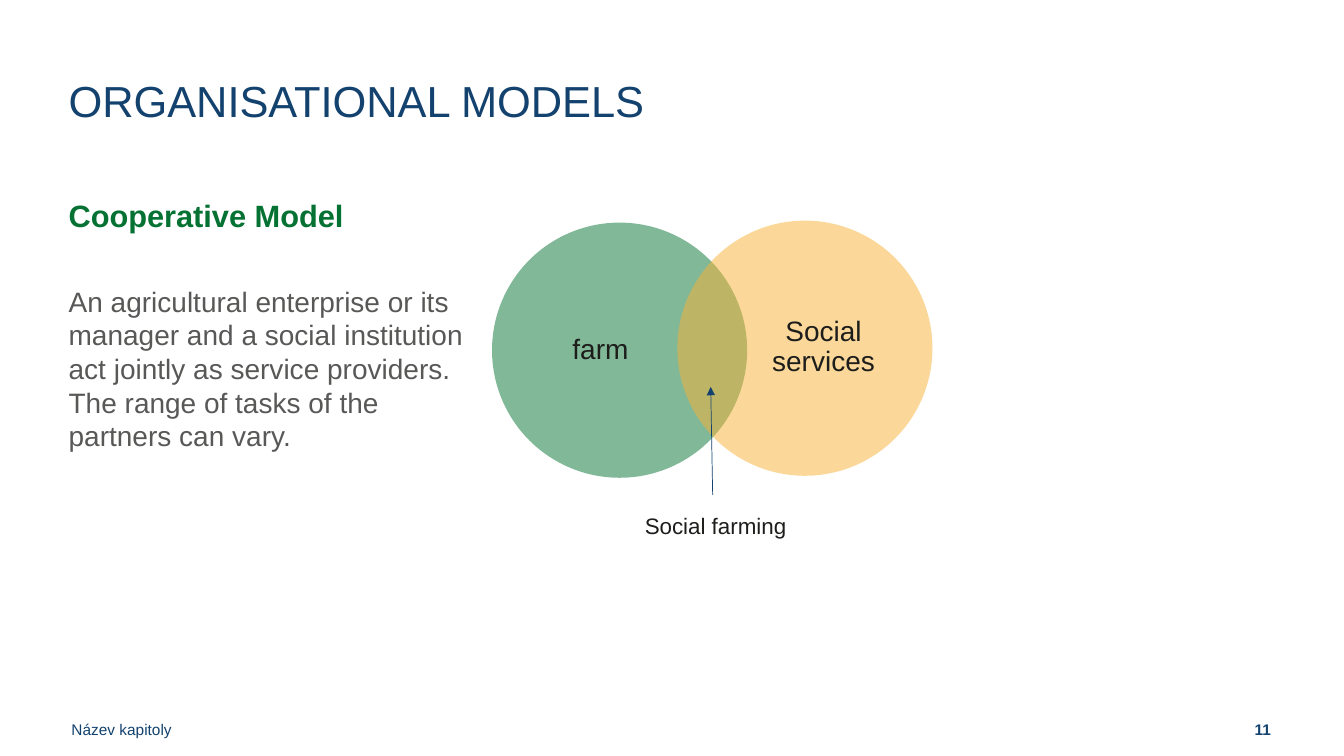
from lxml.etree import SubElement
from pptx import Presentation
from pptx.dml.color import RGBColor
from pptx.enum.shapes import MSO_CONNECTOR, MSO_SHAPE
from pptx.enum.text import MSO_ANCHOR, MSO_AUTO_SIZE, PP_ALIGN
from pptx.oxml.ns import qn
from pptx.util import Cm, Pt

NAVY = RGBColor(0x13, 0x42, 0x6F)
GREEN = RGBColor(0x05, 0x72, 0x33)
AMBER = RGBColor(0xF9, 0xB3, 0x34)
GREY = RGBColor(0x58, 0x58, 0x57)
BLACK = RGBColor(0x1D, 0x1D, 0x1B)

TEXT_LEFT = 1.73
COLUMN_WIDTH = 10.8
CIRCLE_SIZE = 6.43
FOOTER_TOP, FOOTER_HEIGHT = 17.5, 1.52
FOOTER_MARGIN = 1.8


class SlideBuilder:
    font_name = "Arial"

    def __init__(self, slide):
        self.slide = slide

    def fill_frame(self, frame, text, size, color, bold=False, align=PP_ALIGN.LEFT,
                   spacing=None, anchor=MSO_ANCHOR.TOP,
                   insets=(0.25, 0.13, 0.25, 0.13)):
        """Fill a text frame; insets are left, top, right, bottom in cm."""
        frame.word_wrap = True
        frame.auto_size = MSO_AUTO_SIZE.NONE
        frame.vertical_anchor = anchor
        (frame.margin_left, frame.margin_top,
         frame.margin_right, frame.margin_bottom) = map(Cm, insets)
        paragraph = frame.paragraphs[0]
        paragraph.alignment = align
        paragraph.space_before = Pt(0)
        paragraph.line_spacing = spacing
        run = paragraph.add_run()
        run.text = text
        run.font.name = self.font_name
        run.font.size = Pt(size)
        run.font.bold = bold
        run.font.color.rgb = color

    def placeholder(self, index, box, text, size, color, **style):
        holder = self.slide.placeholders[index]
        holder.left, holder.top, holder.width, holder.height = map(Cm, box)
        if index:
            properties = holder.text_frame.paragraphs[0]._p.get_or_add_pPr()
            properties.set("marL", "0")
            properties.set("indent", "0")
            SubElement(properties, qn("a:buNone"))
        self.fill_frame(holder.text_frame, text, size, color, **style)

    def text(self, box, text, size, color, parent=None, **style):
        shapes = (parent or self.slide).shapes
        frame = shapes.add_textbox(*map(Cm, box)).text_frame
        self.fill_frame(frame, text, size, color, **style)

    def circle(self, group, left, top, color):
        circle = group.shapes.add_shape(
            MSO_SHAPE.OVAL, Cm(left), Cm(top), Cm(CIRCLE_SIZE), Cm(CIRCLE_SIZE))
        circle.shadow.inherit = False
        circle.line.fill.background()
        circle.fill.solid()
        circle.fill.fore_color.rgb = color
        color_element = circle._element.spPr.find(qn("a:solidFill"))[0]
        SubElement(color_element, qn("a:alpha"), val="50000")

    def arrow(self, start, end, color, width):
        arrow = self.slide.shapes.add_connector(
            MSO_CONNECTOR.STRAIGHT, *map(Cm, start + end))
        arrow.line.color.rgb = color
        arrow.line.width = Pt(width)
        properties = arrow._element.spPr
        SubElement(properties.find(qn("a:ln")), qn("a:tailEnd"), type="triangle")
        SubElement(properties, qn("a:effectLst"))


def main():
    deck = Presentation()
    deck.slide_width, deck.slide_height = Cm(33.87), Cm(19.05)
    builder = SlideBuilder(deck.slides.add_slide(deck.slide_layouts[3]))

    footer = {"anchor": MSO_ANCHOR.BOTTOM, "spacing": Pt(13.3)}
    builder.text((0, FOOTER_TOP, 11.43, FOOTER_HEIGHT), "Název kapitoly", 11, NAVY,
                 insets=(FOOTER_MARGIN, 0.13, 0, 0.41), **footer)
    builder.text((26.21, FOOTER_TOP, 7.62, FOOTER_HEIGHT), "11", 11, NAVY, bold=True,
                 align=PP_ALIGN.RIGHT, insets=(0, 0.13, FOOTER_MARGIN, 0.41), **footer)

    builder.placeholder(0, (TEXT_LEFT, 1.85, 21.97, 1.8), "ORGANISATIONAL MODELS",
                        31, NAVY, spacing=Pt(34), insets=(0, 0.13, 0.25, 0.13))
    builder.placeholder(1, (TEXT_LEFT, 4.88, COLUMN_WIDTH, 2), "Cooperative Model",
                        22, GREEN, bold=True, spacing=Pt(25),
                        insets=(0, 0.13, 0.25, 0.13))
    builder.placeholder(
        2, (TEXT_LEFT, 6.96, COLUMN_WIDTH, 10.24),
        "An agricultural enterprise or its manager and a social institution act "
        "jointly as service providers. The range of tasks of the partners can vary.",
        20, GREY, spacing=Pt(24), insets=(0, 0.2, 0.25, 0.13))

    venn = builder.slide.shapes.add_group_shape()
    for name, color, left, top, label_left, label_top in (
        ("farm", GREEN, 12.4, 5.61, 13.28, 6.38),
        ("Social services", AMBER, 17.07, 5.56, 18.9, 6.3),
    ):
        builder.circle(venn, left, top, color)
        builder.text((label_left, label_top, 3.71, 4.9), name, 20, BLACK, parent=venn,
                     align=PP_ALIGN.CENTER, spacing=0.9, anchor=MSO_ANCHOR.MIDDLE,
                     insets=(0, 0, 0, 0))

    builder.arrow((17.96, 12.47), (17.91, 9.75), NAVY, 0.5)
    builder.text((16, 12.78, 6.02, 0.94), "Social farming", 16, BLACK)

    deck.save("out.pptx")


if __name__ == "__main__":
    main()
